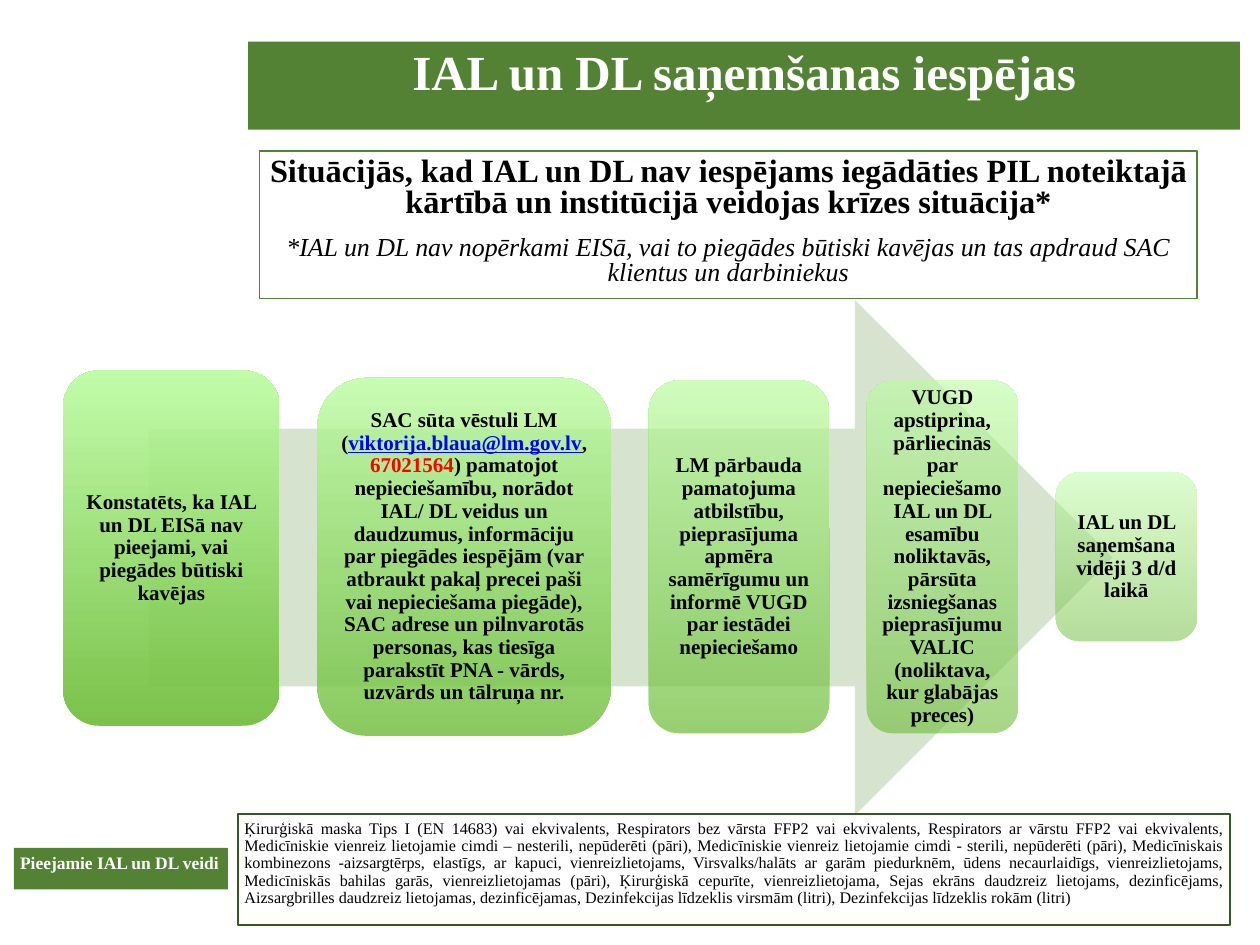
"""Builds the slide on ways to receive protective equipment and disinfectants."""
from lxml.etree import SubElement
from pptx import Presentation
from pptx.dml.color import RGBColor
from pptx.enum.shapes import MSO_SHAPE as Shape
from pptx.enum.text import MSO_ANCHOR as Anchor, PP_ALIGN as Align
from pptx.oxml.ns import qn
from pptx.util import Inches, Pt

GREEN = RGBColor(0x54, 0x82, 0x35)
DARK_GREEN = RGBColor(0x38, 0x57, 0x23)
PALE_GREEN = RGBColor(0xD5, 0xE3, 0xCF)
STEP_BOTTOM = RGBColor(0x6D, 0xBC, 0x38)
STEP_TOP = RGBColor(0xBB, 0xFC, 0xA0)
WHITE = RGBColor(0xFF, 0xFF, 0xFF)
BLACK = RGBColor(0, 0, 0)
BLUE = RGBColor(0, 0, 0xFF)
RED = RGBColor(0xFF, 0, 0)

deck = Presentation()
deck.slide_width, deck.slide_height = Inches(10), Inches(7.5)
COLUMN, ROW = deck.slide_width / 100, deck.slide_height / 75
page = deck.slides.add_slide(deck.slide_layouts[6])


def add_box(kind, left, top, width, height, fill=None, line=None):
    box = page.shapes.add_shape(
        kind, round(left * COLUMN), round(top * ROW), round(width * COLUMN), round(height * ROW))
    box.shadow.inherit = False
    if fill:
        box.fill.solid()
        box.fill.fore_color.rgb = fill
    else:
        box.fill.background()
    if line:
        box.line.color.rgb = line
        box.line.width = Pt(1)
    else:
        box.line.fill.background()
    frame = {"word_wrap": True, "vertical_anchor": Anchor.TOP}
    frame |= dict.fromkeys(
        ("margin_left", "margin_right", "margin_top", "margin_bottom"), Inches(0.05))
    for name, value in frame.items():
        setattr(box.text_frame, name, value)
    return box


def write(para, spans, size, spacing=0.9, align=Align.CENTER, bold=True, italic=False):
    for name, value in {"alignment": align, "line_spacing": spacing}.items():
        setattr(para, name, value)
    font = {"name": "Times New Roman", "size": Pt(size), "bold": bold, "italic": italic}
    for text, color in spans:
        span = para.add_run()
        span.text = text
        for name, value in (font | {"underline": color == BLUE}).items():
            setattr(span.font, name, value)
        span.font.color.rgb = color


title = add_box(Shape.RECTANGLE, 19.7, 3.3, 78.7, 7, fill=GREEN)
write(title.text_frame.paragraphs[0], [("IAL un DL saņemšanas iespējas", WHITE)], 28)

add_box(Shape.RIGHT_ARROW, 11.8, 23.8, 76.5, 40.9, fill=PALE_GREEN)

STEPS = [
    (17.2, 28.2, 43.5, 90, [
        ("Konstatēts, ka IAL un DL EISā nav pieejami, vai piegādes būtiski kavējas", BLACK)]),
    (23.3, 28.4, 44.2, 80, [
        ("SAC sūta vēstuli LM (", BLACK),
        ("viktorija.blaua@lm.gov.lv", BLUE),
        (", ", BLACK),
        ("67021564", RED),
        (") pamatojot nepieciešamību, norādot IAL/ DL veidus un daudzumus, informāciju par "
         "piegādes iespējām (var atbraukt pakaļ precei paši vai nepieciešama piegāde), SAC "
         "adrese un pilnvarotās personas, kas tiesīga parakstīt PNA - vārds, uzvārds un "
         "tālruņa nr.", BLACK)]),
    (14.3, 28, 44.2, 70, [
        ("LM pārbauda pamatojuma atbilstību, pieprasījuma apmēra samērīgumu un informē VUGD "
         "par iestādei nepieciešamo", BLACK)]),
    (12, 28, 44.2, 60, [
        ("VUGD apstiprina, pārliecinās par nepieciešamo IAL un DL esamību noliktavās, pārsūta "
         "izsniegšanas pieprasījumu VALIC (noliktava, kur glabājas preces)", BLACK)]),
    (11.2, 13.4, 44.2, 50, [("IAL un DL saņemšana vidēji 3 d/d laikā", BLACK)]),
]
STEP_GAP = 3
left = 5
for width, height, middle, opacity, spans in STEPS:
    step = add_box(Shape.ROUNDED_RECTANGLE, left, middle - height / 2, width, height)
    step.fill.gradient()
    step.fill.gradient_angle = 90
    for stop, color, position in zip(step.fill.gradient_stops, (STEP_BOTTOM, STEP_TOP), (0, 1)):
        stop.color.rgb = color
        stop.position = position
    for tint in step.element.spPr.find(qn("a:gradFill")).iter(qn("a:srgbClr")):
        SubElement(tint, qn("a:alpha")).set("val", str(opacity * 1000))
    step.text_frame.vertical_anchor = Anchor.MIDDLE
    write(step.text_frame.paragraphs[0], spans, 12)
    left += width + STEP_GAP

situation = add_box(Shape.RECTANGLE, 20.6, 12, 74.4, 11.7, line=GREEN).text_frame
write(situation.paragraphs[0], [
    ("Situācijās, kad IAL un DL nav iespējams iegādāties PIL noteiktajā kārtībā un institūcijā "
     "veidojas krīzes situācija*", BLACK)], 18.5, spacing=0.8)
footnote = situation.add_paragraph()
footnote.space_before = Pt(10)
write(footnote, [
    ("*IAL un DL nav nopērkami EISā, vai to piegādes būtiski kavējas un tas apdraud SAC "
     "klientus un darbiniekus", BLACK)], 14.8, spacing=0.8, bold=False, italic=True)

label = add_box(Shape.RECTANGLE, 1.1, 67.3, 17, 3.3, fill=GREEN)
write(label.text_frame.paragraphs[0], [("Pieejamie IAL un DL veidi", WHITE)], 10, align=Align.LEFT)

supplies = add_box(Shape.RECTANGLE, 18.9, 64.6, 78.7, 8.8, line=DARK_GREEN)
write(supplies.text_frame.paragraphs[0], [
    ("Ķirurģiskā maska Tips I (EN 14683) vai ekvivalents, Respirators bez vārsta FFP2 vai "
     "ekvivalents, Respirators ar vārstu FFP2 vai ekvivalents, Medicīniskie vienreiz lietojamie "
     "cimdi – nesterili, nepūderēti (pāri), Medicīniskie vienreiz lietojamie cimdi - sterili, "
     "nepūderēti (pāri), Medicīniskais kombinezons -aizsargtērps, elastīgs, ar kapuci, "
     "vienreizlietojams, Virsvalks/halāts ar garām piedurknēm, ūdens necaurlaidīgs, "
     "vienreizlietojams, Medicīniskās bahilas garās, vienreizlietojamas (pāri), Ķirurģiskā "
     "cepurīte, vienreizlietojama, Sejas ekrāns daudzreiz lietojams, dezinficējams, "
     "Aizsargbrilles daudzreiz lietojamas, dezinficējamas, Dezinfekcijas līdzeklis virsmām "
     "(litri), Dezinfekcijas līdzeklis rokām (litri)", BLACK)],
    9.2, align=Align.JUSTIFY, bold=False)

deck.save("out.pptx")
